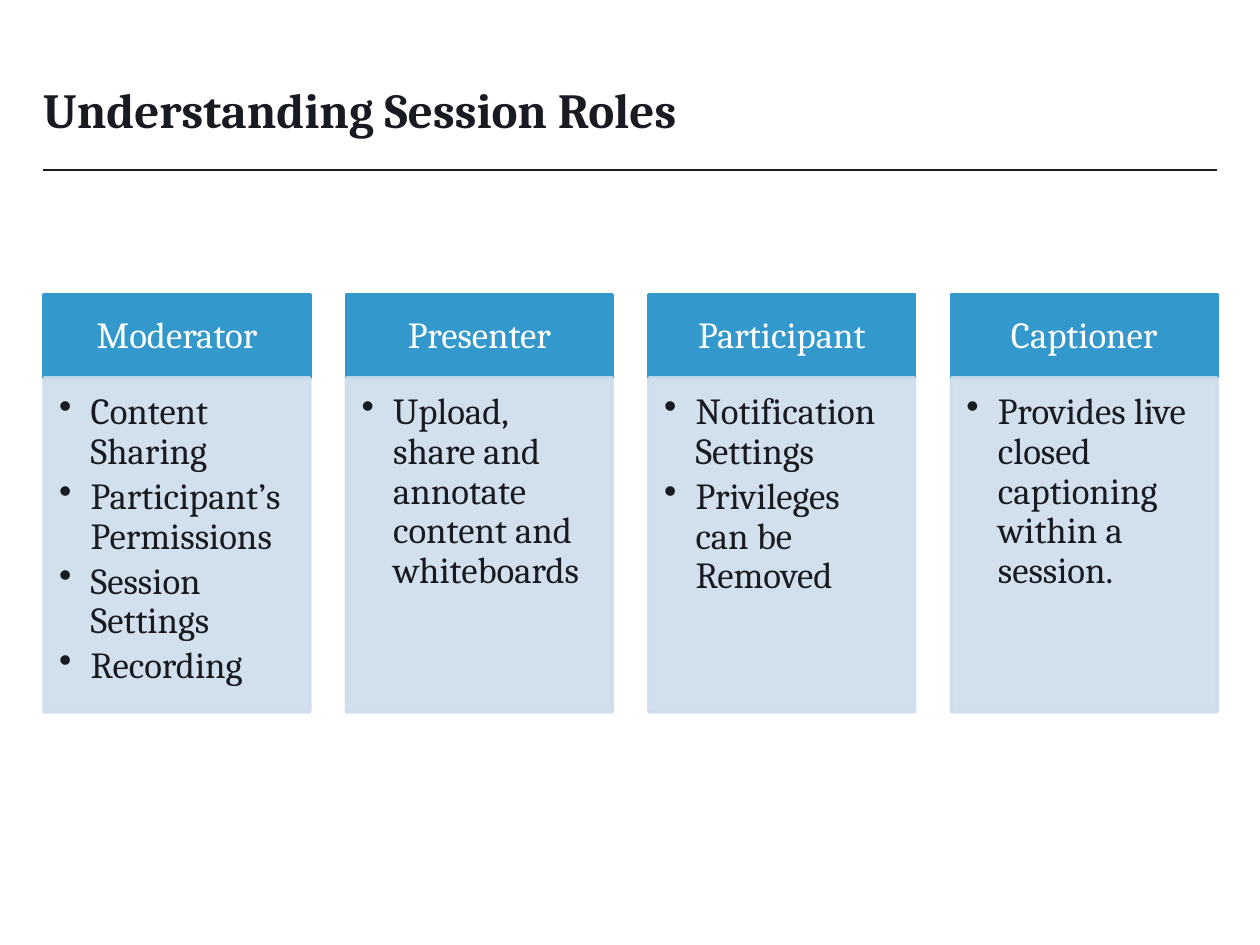
"""Build the session roles slide: a ruled title above four role columns."""
from lxml import etree
from pptx import Presentation
from pptx.dml.color import RGBColor
from pptx.enum.shapes import MSO_CONNECTOR, MSO_SHAPE
from pptx.enum.text import MSO_ANCHOR, MSO_AUTO_SIZE, PP_ALIGN
from pptx.oxml.ns import qn
from pptx.util import Inches, Pt

RECT, STRAIGHT = MSO_SHAPE.RECTANGLE, MSO_CONNECTOR.STRAIGHT
TOP, MIDDLE, BOTTOM = MSO_ANCHOR.TOP, MSO_ANCHOR.MIDDLE, MSO_ANCHOR.BOTTOM
LEFT, CENTER, NO_FIT = PP_ALIGN.LEFT, PP_ALIGN.CENTER, MSO_AUTO_SIZE.NONE
INK, BLUE, PALE, WHITE = "191B23", "3398CC", "CEDDEC", "FFFFFF"
FONT = "Cambria"
COL_LEFT, COL_STEP, COL_W = 0.35, 2.4, 2.11
HEAD_TOP, HEAD_H, BODY_H = 2.34, 0.66, 2.65

ROLES = {
    "Moderator": ["Content Sharing", "Participant’s Permissions",
                  "Session Settings", "Recording"],
    "Presenter": ["Upload, share and annotate content and whiteboards"],
    "Participant": ["Notification Settings", "Privileges can be Removed"],
    "Captioner": ["Provides live closed captioning within a session."],
}


def style(target, size, color, bold=False):
    f = target.font
    f.name, f.size, f.bold = FONT, Pt(size), bold
    f.color.rgb = RGBColor.from_string(color)


def add_box(left, top, height, color, anchor, insets):
    s = slide.shapes.add_shape(RECT, Inches(left), Inches(top), Inches(COL_W), Inches(height))
    s.shadow.inherit = False
    s.fill.solid()
    s.fill.fore_color.rgb = RGBColor.from_string(color)
    s.line.color.rgb = RGBColor.from_string(color)
    s.line.width = Pt(2)
    tf = s.text_frame
    tf.word_wrap = True
    tf.vertical_anchor = anchor
    tf.margin_left, tf.margin_top, tf.margin_right, tf.margin_bottom = map(Inches, insets)
    return s


prs = Presentation()
prs.slide_width, prs.slide_height = Inches(10), Inches(7.5)
slide = prs.slides.add_slide(prs.slide_layouts[5])

rule = slide.shapes.add_connector(STRAIGHT, Inches(0.34), Inches(1.35), Inches(9.66), Inches(1.35))
rule.line.color.rgb = RGBColor.from_string(INK)
rule.line.width = Pt(0.75)
etree.SubElement(rule._element.spPr, qn("a:effectLst"))

title = slide.shapes.title
title.left, title.top = Inches(0.34), Inches(0.31)
title.width, title.height = Inches(9.32), Inches(0.84)
tf = title.text_frame
tf.text = "Understanding Session Roles"
tf.auto_size = NO_FIT
tf.word_wrap = True
tf.vertical_anchor = BOTTOM
tf.margin_left = tf.margin_right = 0
tf.margin_top = tf.margin_bottom = Inches(0.05)
tf.paragraphs[0].alignment = LEFT
style(tf.paragraphs[0], 28, INK, True)

for i, (role, duties) in enumerate(ROLES.items()):
    left = COL_LEFT + i * COL_STEP
    head = add_box(left, HEAD_TOP, HEAD_H, BLUE, MIDDLE, (0.16, 0.09, 0.16, 0.09))
    p = head.text_frame.paragraphs[0]
    p.text = role
    p.alignment = CENTER
    p.line_spacing = 0.9
    style(p, 21, WHITE)

    body = add_box(left, HEAD_TOP + HEAD_H, BODY_H, PALE, TOP, (0.12, 0.12, 0.16, 0.18))
    for clr in body._element.spPr.iter(qn("a:srgbClr")):
        etree.SubElement(clr, qn("a:alpha"), val="90000")
    tf = body.text_frame
    tf.text = "\n".join(duties)
    for p in tf.paragraphs:
        p.level = 1
        p.alignment = LEFT
        p.line_spacing = 0.9
        p.space_after = Pt(3)
        pPr = p._p.get_or_add_pPr()
        pPr.set("marL", str(Inches(0.25)))
        pPr.set("indent", str(Inches(-0.25)))
        etree.SubElement(pPr, qn("a:buChar"), char="•")
        style(p, 21, INK)

prs.save("out.pptx")
